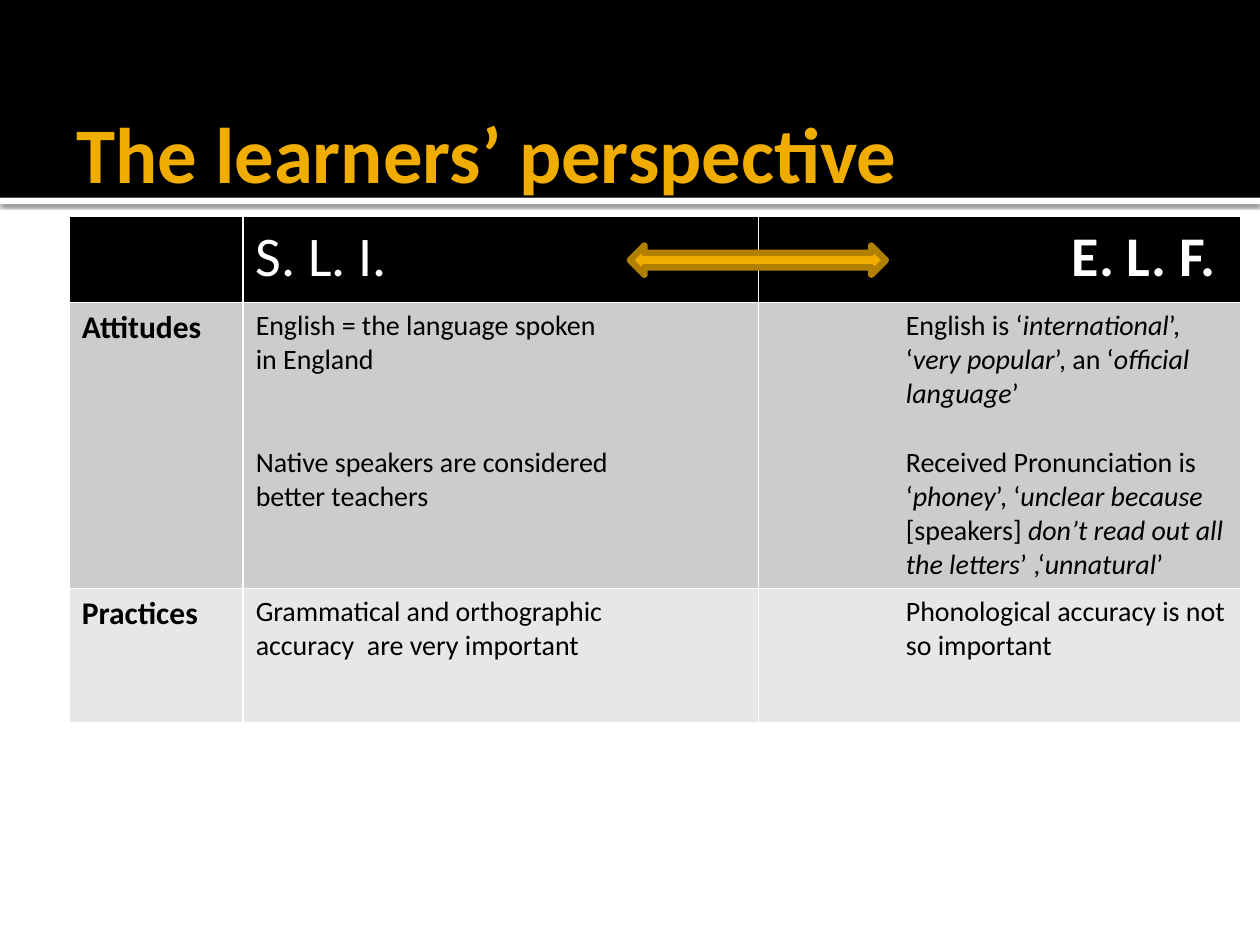
from lxml import etree
from pptx import Presentation
from pptx import util as u
from pptx.dml.color import RGBColor
from pptx.enum import shapes, text
from pptx.oxml import parse_xml
from pptx.oxml.ns import qn

COLORS = {"black": "000000", "white": "FFFFFF", "gold": "F0AD00",
          "bronze": "B28000", "band": "CCCCCC", "pale": "E7E7E7"}
FONT = "Calibri"
NS = "http://schemas.openxmlformats.org/drawingml/2006/main"

TITLE = "The learners’ perspective"
# A paragraph is a list of runs; in the E. L. F. column every second run is italic.
HEADER = ["", "S. L. I.", "E. L. F. "]
ROWS = [
    ("Attitudes",
     [["English = the language spoken"], ["in England"],
      ["Native speakers are considered"], ["better teachers"]],
     [["English is ‘", "international", "’, ‘", "very popular", "’, an ‘",
       "official language", "’"],
      ["Received Pronunciation is ‘", "phoney", "’, ‘", "unclear because",
       " [speakers] ", "don’t read out all the letters", "’ ,‘", "unnatural", "’"]]),
    ("Practices",
     [["Grammatical and orthographic"], ["accuracy  are very important"]],
     [["Phonological accuracy is not so important"]]),
]
ROW_FILLS = ["black", "band", "pale"]
COLUMN_WIDTHS = [1.38, 4.09, 3.83]
ROW_HEIGHTS = [0.68, 2.27, 1.07]
TABLE_LEFT, TABLE_TOP = 0.55, 1.72
BAND_HEIGHT, RULE_HEIGHT = 1.57, 0.05
BODY_LINE = 19.5   # points per line of body text
ELF_INDENT = 1.07


def rgb(name):
    return RGBColor.from_string(COLORS[name])


def add_span(para, words, size, color, bold=False, italic=False):
    span = para.add_run()
    span.text = words
    font = span.font
    font.name, font.size, font.bold, font.italic = FONT, u.Pt(size), bold, italic
    font.color.rgb = rgb(color)


def add_block(page, kind, left, top, width, height, fill):
    block = page.shapes.add_shape(kind, *map(u.Inches, (left, top, width, height)))
    block.shadow.inherit = False
    block.fill.solid()
    block.fill.fore_color.rgb = rgb(fill)
    block.line.fill.background()
    return block


def add_drop_shadow(block):
    effects = block._element.spPr.find(qn("a:effectLst"))
    effects.append(parse_xml(
        f'<a:outerShdw xmlns:a="{NS}" blurRad="{u.Pt(2.5)}" dist="{u.Pt(0.8)}" '
        f'dir="5400000" algn="tl" rotWithShape="0"><a:srgbClr val="{COLORS["black"]}">'
        '<a:alpha val="60000"/></a:srgbClr></a:outerShdw>'))


def style_cell(cell, fill):
    """White one-point borders and a plain fill."""
    props = cell._tc.get_or_add_tcPr()
    for side in "LRTB":
        line = etree.SubElement(props, qn(f"a:ln{side}"), w=str(u.Pt(1)))
        solid = etree.SubElement(line, qn("a:solidFill"))
        etree.SubElement(solid, qn("a:srgbClr"), val=COLORS["white"])
    cell.fill.solid()
    cell.fill.fore_color.rgb = rgb(fill)


def fill_body(cell, paragraphs, gap_before, gap_lines, indent=0):
    """Write paragraphs, leaving gap_lines free above number gap_before."""
    for number, runs in enumerate(paragraphs):
        frame = cell.text_frame
        para = frame.add_paragraph() if number else frame.paragraphs[0]
        if indent:
            props = para._p.get_or_add_pPr()
            props.set("marL", str(u.Inches(indent)))
            props.set("indent", "0")
        if number == gap_before:
            para.space_before = u.Pt(gap_lines * BODY_LINE)
        for place, words in enumerate(runs):
            add_span(para, words, 16, "black", italic=place % 2 == 1)


def add_comparison(page):
    table = page.shapes.add_table(
        len(ROW_HEIGHTS), len(COLUMN_WIDTHS), u.Inches(TABLE_LEFT), u.Inches(TABLE_TOP),
        u.Inches(sum(COLUMN_WIDTHS)), u.Inches(sum(ROW_HEIGHTS))).table
    for column, width in zip(table.columns, COLUMN_WIDTHS):
        column.width = u.Inches(width)
    for row, height, fill in zip(table.rows, ROW_HEIGHTS, ROW_FILLS):
        row.height = u.Inches(height)
        for cell in row.cells:
            style_cell(cell, fill)
    for column, label in enumerate(HEADER):
        if label:
            para = table.cell(0, column).text_frame.paragraphs[0]
            last = column == len(HEADER) - 1
            para.alignment = text.PP_ALIGN.RIGHT if last else text.PP_ALIGN.LEFT
            add_span(para, label, 32, "white", bold=last)
    for number, (label, sli, elf) in enumerate(ROWS, start=1):
        add_span(table.cell(number, 0).text_frame.paragraphs[0], label, 18, "black", bold=True)
        fill_body(table.cell(number, 1), sli, gap_before=2, gap_lines=2)
        fill_body(table.cell(number, 2), elf, gap_before=1, gap_lines=1, indent=ELF_INDENT)


def add_title(page):
    box = page.shapes.add_textbox(*map(u.Inches, (0.51, 0.52, 9, 1.37)))
    frame = box.text_frame
    frame.word_wrap = True
    frame.vertical_anchor = text.MSO_ANCHOR.MIDDLE
    frame.margin_right = u.Inches(0.05)
    add_span(frame.paragraphs[0], TITLE, 45, "gold", bold=True)


def main():
    deck = Presentation()
    deck.slide_width, deck.slide_height = u.Inches(10), u.Inches(7.5)
    page = deck.slides.add_slide(deck.slide_layouts[6])
    kinds = shapes.MSO_SHAPE
    rule = add_block(page, kinds.RECTANGLE, 0, BAND_HEIGHT, 10, RULE_HEIGHT, "white")
    add_drop_shadow(rule)
    add_block(page, kinds.RECTANGLE, 0, 0, 10, BAND_HEIGHT, "black")
    add_title(page)
    add_comparison(page)
    arrow = add_block(page, kinds.LEFT_RIGHT_ARROW, 5, 1.95, 2.03, 0.23, "gold")
    arrow.line.color.rgb = rgb("bronze")
    arrow.line.width = u.Pt(3.78)
    deck.save("out.pptx")


if __name__ == "__main__":
    main()
